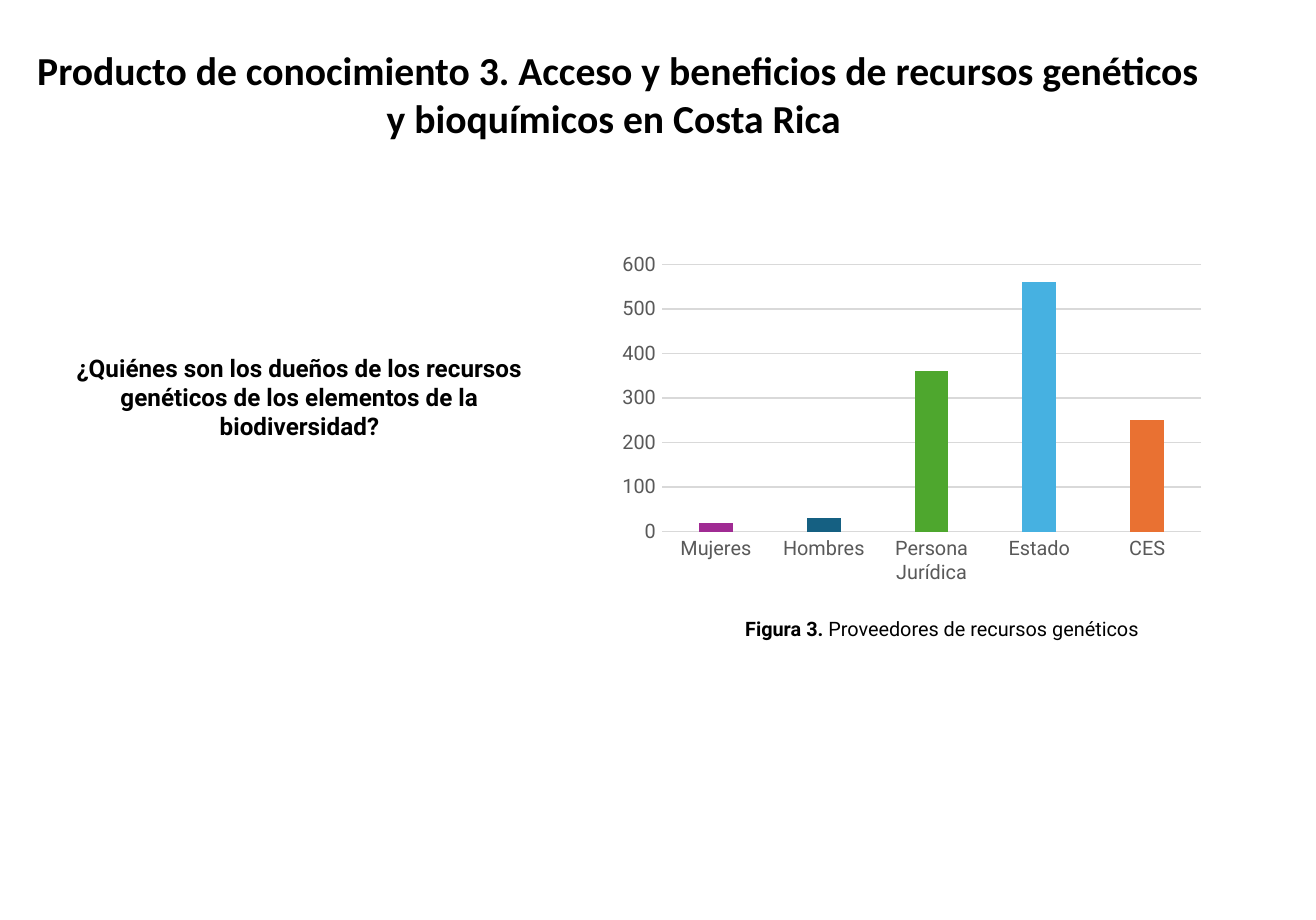
from dataclasses import dataclass
from typing import Any

from lxml.etree import SubElement
from pptx import Presentation
from pptx.chart.chart import Chart
from pptx.chart.data import CategoryChartData
from pptx.dml.color import RGBColor
from pptx.enum.chart import XL_CHART_TYPE, XL_TICK_MARK
from pptx.enum.text import MSO_ANCHOR, MSO_AUTO_SIZE, PP_ALIGN
from pptx.oxml.ns import qn
from pptx.util import Emu, Pt

PX = 9144  # 100 px to the inch

BLACK = RGBColor(0x00, 0x00, 0x00)
LABEL_GRAY = RGBColor(0x59, 0x59, 0x59)
GRID_GRAY = RGBColor(0xD9, 0xD9, 0xD9)
PURPLE = RGBColor(0xA0, 0x2B, 0x93)
TEAL = RGBColor(0x15, 0x60, 0x82)
GREEN = RGBColor(0x4E, 0xA7, 0x2E)
SKY = RGBColor(0x46, 0xB1, 0xE1)
ORANGE = RGBColor(0xE9, 0x71, 0x32)


@dataclass(frozen=True)
class Span:
    text: str
    bold: bool = True


@dataclass(frozen=True)
class TextItem:
    place: tuple[int, int, int, int]
    font: str
    size: int
    spans: tuple[Span, ...]
    is_title: bool = False


@dataclass(frozen=True)
class Provider:
    name: str
    count: int
    color: RGBColor


TEXTS = (
    TextItem((10, 24, 760, 71), "Calibri", 18, (
        Span("Producto de conocimiento 3. Acceso y beneficios de recursos "
             "genéticos y bioquímicos en Costa Rica "),), is_title=True),
    TextItem((415, 384, 361, 25), "Roboto", 9, (
        Span("Figura 3. "),
        Span("Proveedores de recursos genéticos ", bold=False))),
    TextItem((16, 218, 346, 66), "Roboto", 11, (
        Span("¿Quiénes son los dueños de los recursos genéticos de los "
             "elementos de la biodiversidad?"),)),
)

PROVIDERS = (
    Provider("Mujeres", 20, PURPLE),
    Provider("Hombres", 30, TEAL),
    Provider("Persona Jurídica", 360, GREEN),
    Provider("Estado", 560, SKY),
    Provider("CES", 250, ORANGE),
)
CHART_PLACE = (387, 140, 382, 244)
PLOT_LAYOUT = {
    "layoutTarget": "inner", "xMode": "edge", "yMode": "edge",
    "x": 0.08, "y": 0.11, "w": 0.89, "h": 0.69,
}


def to_emu(place: tuple[int, ...]) -> list[Emu]:
    return [Emu(length * PX) for length in place]


def apply_format(target: Any, values: dict[str, Any]) -> None:
    for name, value in values.items():
        setattr(target, name, value)


def style_font(font: Any, name: str, size: int, color: RGBColor,
               bold: bool = False) -> None:
    apply_format(font, {"name": name, "size": Pt(size), "bold": bold})
    font.color.rgb = color


def add_text(page: Any, item: TextItem) -> None:
    left, top, width, height = to_emu(item.place)
    if item.is_title:
        box = page.shapes.title
        apply_format(box, {"left": left, "top": top,
                           "width": width, "height": height})
    else:
        box = page.shapes.add_textbox(left, top, width, height)
    apply_format(box.text_frame, {
        "word_wrap": True,
        "auto_size": MSO_AUTO_SIZE.SHAPE_TO_FIT_TEXT,
        "vertical_anchor": MSO_ANCHOR.TOP,
    })
    para = box.text_frame.paragraphs[0]
    para.alignment = PP_ALIGN.CENTER
    for part in item.spans:
        span = para.add_run()
        span.text = part.text
        style_font(span.font, item.font, item.size, BLACK, part.bold)


def set_plot_layout(chart: Chart) -> None:
    plot_area = chart.element.find(f".//{qn('c:plotArea')}")
    for old_layout in plot_area.findall(qn("c:layout")):
        plot_area.remove(old_layout)
    layout = SubElement(plot_area, qn("c:layout"))
    plot_area.insert(0, layout)
    manual = SubElement(layout, qn("c:manualLayout"))
    for tag, value in PLOT_LAYOUT.items():
        SubElement(manual, qn(f"c:{tag}")).set("val", str(value))


def add_provider_chart(page: Any) -> None:
    data = CategoryChartData()
    data.categories = [provider.name for provider in PROVIDERS]
    data.add_series("Series 1", [provider.count for provider in PROVIDERS])
    chart = page.shapes.add_chart(
        XL_CHART_TYPE.COLUMN_CLUSTERED, *to_emu(CHART_PLACE), data).chart
    apply_format(chart, {"has_title": False, "has_legend": False})
    style_font(chart.font, "Roboto", 10, BLACK)
    set_plot_layout(chart)

    # Columns
    plot = chart.plots[0]
    apply_format(plot, {"gap_width": 219, "overlap": -27,
                        "vary_by_categories": False})
    for index, provider in enumerate(PROVIDERS):
        fill = plot.series[0].points[index].format.fill
        fill.solid()
        fill.fore_color.rgb = provider.color

    # Axes and gridlines
    for axis in (chart.category_axis, chart.value_axis):
        apply_format(axis, {"major_tick_mark": XL_TICK_MARK.NONE,
                            "minor_tick_mark": XL_TICK_MARK.NONE})
        style_font(axis.tick_labels.font, "Roboto", 9, LABEL_GRAY)
    apply_format(chart.value_axis, {"minimum_scale": 0, "maximum_scale": 600,
                                    "major_unit": 100})
    chart.value_axis.format.line.fill.background()
    for ruled in (chart.category_axis, chart.value_axis.major_gridlines):
        ruled.format.line.color.rgb = GRID_GRAY
        ruled.format.line.width = Pt(0.75)


def main() -> None:
    deck = Presentation()
    deck.slide_width, deck.slide_height = to_emu((830, 580))
    page = deck.slides.add_slide(deck.slide_layouts.get_by_name("Title Only"))
    add_provider_chart(page)
    for item in TEXTS:
        add_text(page, item)
    deck.save("out.pptx")


if __name__ == "__main__":
    main()
